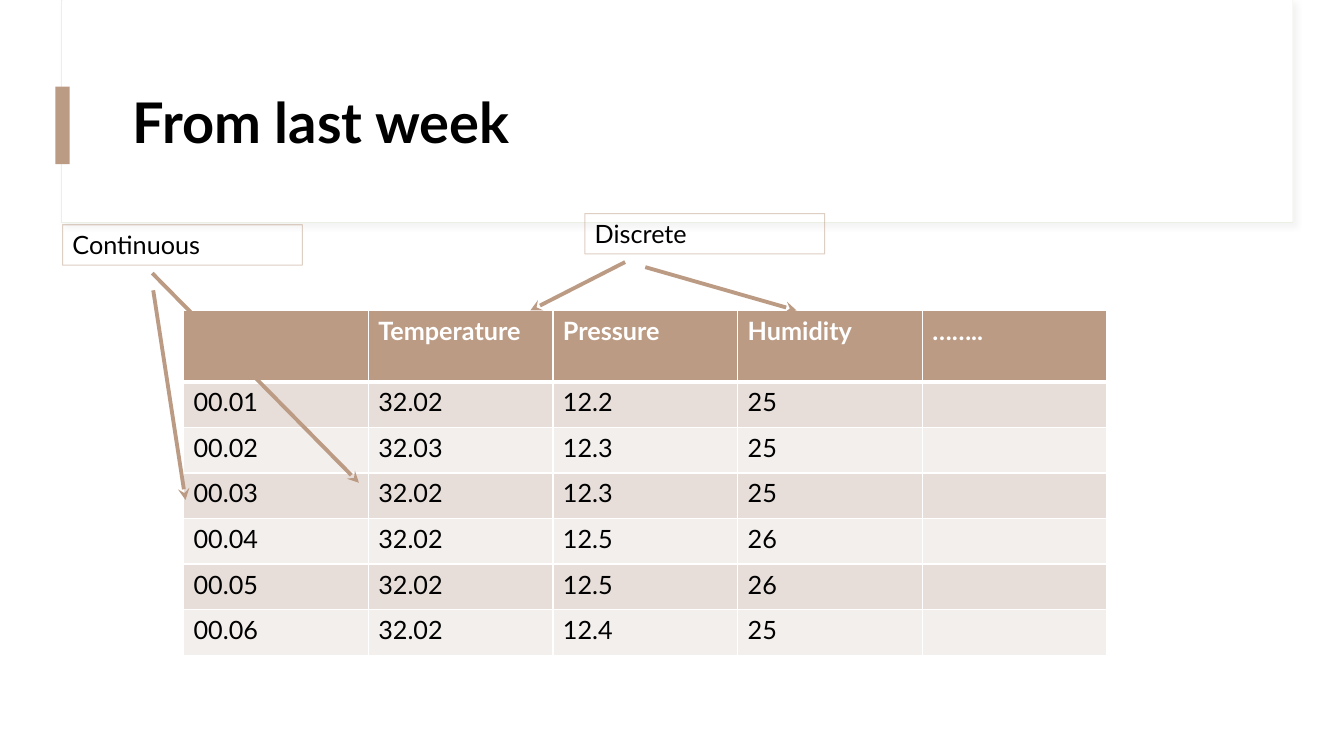
"""Build the slide that sorts last week's readings into continuous and discrete."""
from dataclasses import dataclass

from lxml.etree import SubElement
from pptx import Presentation
from pptx.dml.color import RGBColor
from pptx.enum.shapes import MSO_CONNECTOR, MSO_SHAPE
from pptx.enum.text import MSO_ANCHOR, MSO_AUTO_SIZE, PP_ALIGN
from pptx.oxml.ns import qn
from pptx.shapes.autoshape import Shape
from pptx.slide import Slide
from pptx.table import _Cell
from pptx.text.text import _Paragraph
from pptx.util import Emu, Pt

PX = 9144
FONT = "Lato"
HEX = {
    "white": "FFFFFF",
    "black": "000000",
    "tan": "BC9B84",
    "dark": "E7DED9",
    "light": "F3EFED",
    "edge": "EBF0E4",
    "shade": "D9D9D9",
}
HEAD = ["", "Temperature", "Pressure", "Humidity", "…….."]
ROWS = [
    ["00.01", "32.02", "12.2", "25", ""],
    ["00.02", "32.03", "12.3", "25", ""],
    ["00.03", "32.02", "12.3", "25", ""],
    ["00.04", "32.02", "12.5", "26", ""],
    ["00.05", "32.02", "12.5", "26", ""],
    ["00.06", "32.02", "12.4", "25", ""],
]


@dataclass
class Box:
    left: int
    top: int
    width: int
    height: int
    fill: str = ""
    line: str = ""
    text: str = ""


@dataclass
class Arrow:
    x1: int
    y1: int
    x2: int
    y2: int


FRAME = Box(61, 0, 1221, 221, "white", "edge")
PANEL = Box(62, 0, 1220, 220, "white")
ACCENT = Box(55, 86, 14, 77, "tan")
TITLE = Box(122, 60, 1112, 129, text="From last week")
GRID = Box(182, 308, 916, 342)
LABELS = [
    Box(62, 223, 238, 40, line="tan", text="Continuous"),
    Box(580, 212, 238, 40, line="tan", text="Discrete"),
]
ARROWS = [
    Arrow(620, 260, 526, 308),
    Arrow(151, 271, 356, 479),
    Arrow(152, 288, 184, 496),
    Arrow(640, 265, 790, 308),
]


def px(num: int) -> Emu:
    """Turn px into EMU."""
    return Emu(num * PX)


def tint(name: str) -> RGBColor:
    """Look up a named colour."""
    return RGBColor.from_string(HEX[name])


def write(para: _Paragraph, text: str, size: int, hue: str, bold: bool) -> None:
    """Add one styled run."""
    run = para.add_run()
    run.text = text
    run.font.name = FONT
    run.font.size = Pt(size)
    run.font.bold = bold
    run.font.color.rgb = tint(hue)


def draw_box(slide: Slide, box: Box) -> Shape:
    """Draw a plain rectangle."""
    shape = slide.shapes.add_shape(
        MSO_SHAPE.RECTANGLE, px(box.left), px(box.top), px(box.width), px(box.height)
    )
    shape.shadow.inherit = False
    if box.fill:
        shape.fill.solid()
        shape.fill.fore_color.rgb = tint(box.fill)
    else:
        shape.fill.background()
    if box.line:
        shape.line.color.rgb = tint(box.line)
        shape.line.width = Pt(0.75)
    else:
        shape.line.fill.background()
    return shape


def cast(shape: Shape) -> None:
    """Give a shape a soft drop shadow."""
    effects = shape.element.spPr.find(qn("a:effectLst"))
    drop = SubElement(
        effects, qn("a:outerShdw"), blurRad=str(Pt(4)), dist=str(Pt(3)),
        dir=str(45 * 60000), algn="tl", rotWithShape="0",
    )
    shade = SubElement(drop, qn("a:srgbClr"), val=HEX["shade"])
    SubElement(shade, qn("a:alpha"), val="30000")


def draw_label(slide: Slide, box: Box) -> None:
    """Draw a label with a faint outline."""
    shape = draw_box(slide, box)
    line = shape.line._get_or_add_ln()
    SubElement(line.find(".//" + qn("a:srgbClr")), qn("a:alpha"), val="47000")
    frame = shape.text_frame
    frame.word_wrap = True
    frame.auto_size = MSO_AUTO_SIZE.SHAPE_TO_FIT_TEXT
    frame.vertical_anchor = MSO_ANCHOR.TOP
    para = frame.paragraphs[0]
    para.alignment = PP_ALIGN.LEFT
    write(para, box.text, 18, "black", False)


def draw_title(slide: Slide, box: Box) -> None:
    """Draw the slide title."""
    shape = slide.shapes.add_textbox(
        px(box.left), px(box.top), px(box.width), px(box.height)
    )
    frame = shape.text_frame
    frame.word_wrap = True
    frame.vertical_anchor = MSO_ANCHOR.MIDDLE
    para = frame.paragraphs[0]
    para.line_spacing = 0.9
    write(para, box.text, 40, "black", True)


def draw_cell(cell: _Cell, text: str, row: int) -> None:
    """Fill, edge and write one cell."""
    props = cell._tc.get_or_add_tcPr()
    thick = {0: "lnB", 1: "lnT"}.get(row)
    for side in ("lnL", "lnR", "lnT", "lnB"):
        width = Pt(3 if side == thick else 1)
        line = SubElement(props, qn("a:" + side), w=str(width))
        fill = SubElement(line, qn("a:solidFill"))
        SubElement(fill, qn("a:srgbClr"), val=HEX["white"])
    cell.fill.solid()
    cell.fill.fore_color.rgb = tint(("dark" if row % 2 else "light") if row else "tan")
    para = cell.text_frame.paragraphs[0]
    para.font.size = Pt(18)
    if text:
        write(para, text, 18, "black" if row else "white", row == 0)


def draw_table(slide: Slide, box: Box) -> None:
    """Draw the table of readings."""
    rows = [HEAD, *ROWS]
    table = slide.shapes.add_table(
        len(rows), len(HEAD), px(box.left), px(box.top), px(box.width), px(box.height)
    ).table
    for col in table.columns:
        col.width = px(box.width) // len(HEAD)
    for r, row in enumerate(rows):
        table.rows[r].height = px(box.height - 71) // len(ROWS) if r else px(71)
        for c, text in enumerate(row):
            draw_cell(table.cell(r, c), text, r)


def draw_arrow(slide: Slide, arrow: Arrow) -> None:
    """Draw a line with a stealth head."""
    link = slide.shapes.add_connector(
        MSO_CONNECTOR.STRAIGHT, px(arrow.x1), px(arrow.y1), px(arrow.x2), px(arrow.y2)
    )
    link.line.color.rgb = tint("tan")
    link.line.width = Pt(2.75)
    SubElement(link.line._get_or_add_ln(), qn("a:tailEnd"), type="stealth")
    SubElement(link._element.spPr, qn("a:effectLst"))


def main() -> None:
    """Build and save the deck."""
    deck = Presentation()
    deck.slide_width, deck.slide_height = px(1333), px(750)
    slide = deck.slides.add_slide(deck.slide_layouts[6])
    cast(draw_box(slide, FRAME))
    for box in (PANEL, ACCENT):
        draw_box(slide, box)
    draw_title(slide, TITLE)
    draw_table(slide, GRID)
    for box in LABELS:
        draw_label(slide, box)
    for arrow in ARROWS:
        draw_arrow(slide, arrow)
    deck.save("out.pptx")


if __name__ == "__main__":
    main()
